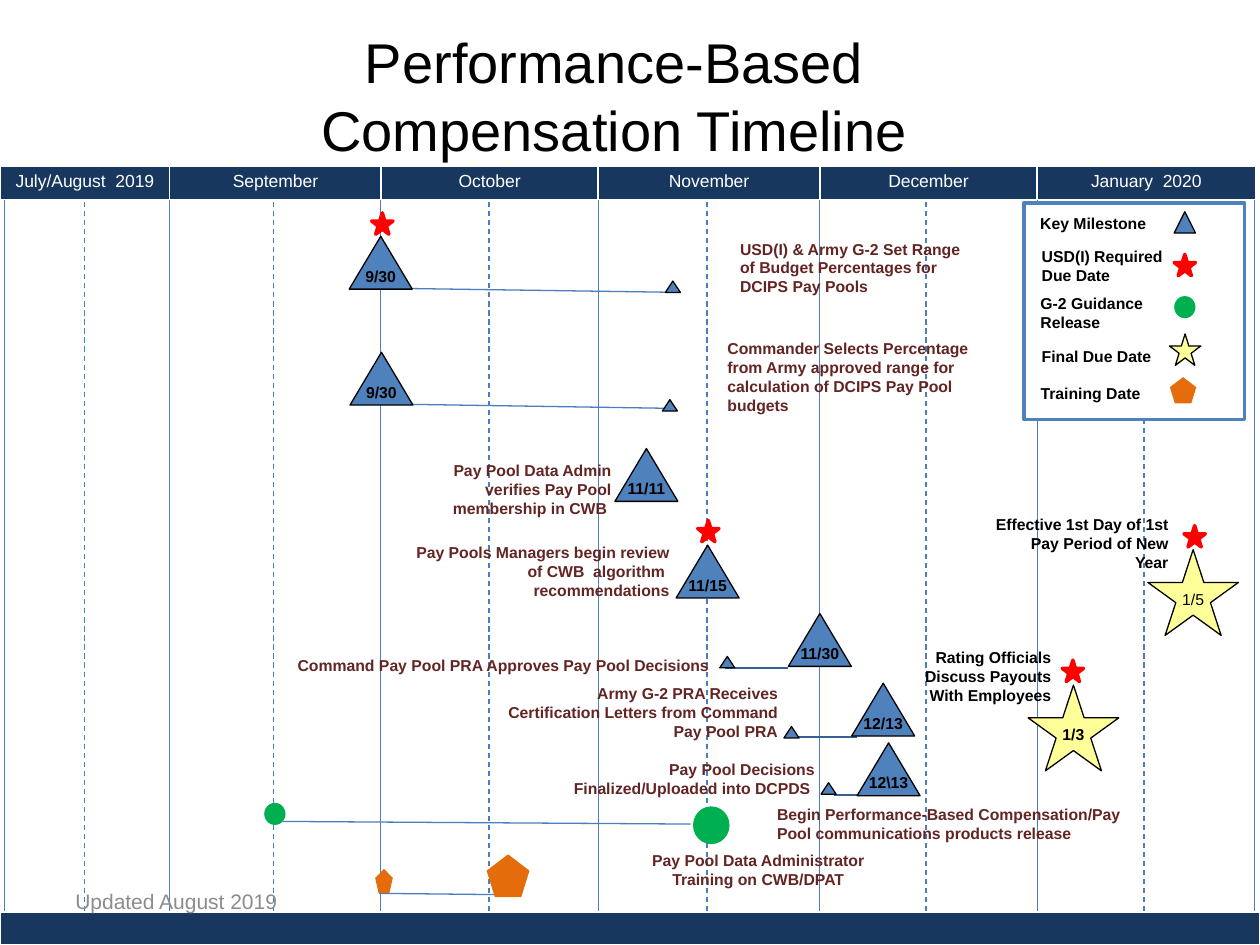
"""Builds the performance-based compensation timeline slide."""
import lxml.etree
import pptx
import pptx.dml.color
import pptx.enum.dml
import pptx.enum.shapes
import pptx.enum.text
import pptx.oxml.ns
import pptx.util

Pt = pptx.util.Pt
RGB = pptx.dml.color.RGBColor.from_string
SHAPE = pptx.enum.shapes.MSO_SHAPE
ALIGN = pptx.enum.text.PP_ALIGN
MIDDLE = pptx.enum.text.MSO_ANCHOR.MIDDLE
AUTO_SIZE = pptx.enum.text.MSO_AUTO_SIZE
DASH = pptx.enum.dml.MSO_LINE.DASH

COLORS = {
    "black": "000000", "white": "FFFFFF", "navy": "17375E", "blue": "4F81BD",
    "grid": "4B7EBC", "bar": "376092", "maroon": "632523", "red": "FF0000",
    "yellow": "FFFF99", "green": "00B050", "orange": "E46C0A", "gray": "8C8C8C",
}


def write(frame, text, size, color, bold=False, alignment=ALIGN.LEFT):
    paragraph = frame.paragraphs[0]
    paragraph.alignment = alignment
    run = paragraph.add_run()
    run.text = text
    run.font.name = "Arial"
    run.font.size = Pt(size)
    run.font.bold = bold
    run.font.color.rgb = RGB(COLORS[color])


def add_line(x1, y1, x2, y2, color="grid", width=0.75, dash=None):
    line = slide.shapes.add_connector(
        pptx.enum.shapes.MSO_CONNECTOR.STRAIGHT, Pt(x1), Pt(y1), Pt(x2), Pt(y2))
    line.line.color.rgb = RGB(COLORS[color])
    line.line.width = Pt(width)
    line.line.dash_style = dash
    properties = line._element.spPr
    lxml.etree.SubElement(properties, pptx.oxml.ns.qn("a:effectLst"))


presentation = pptx.Presentation()
presentation.slide_width = Pt(720)
presentation.slide_height = Pt(540)
slide = presentation.slides.add_slide(presentation.slide_layouts[5])

title = slide.shapes.title
title.left, title.top, title.width, title.height = Pt(126), Pt(18), Pt(450), Pt(72.7)
title.text_frame.auto_size = AUTO_SIZE.NONE
title.text_frame.vertical_anchor = MIDDLE
write(title.text_frame, "Performance-Based Compensation Timeline", 32, "black",
      alignment=ALIGN.CENTER)

for x in (48.2, 156.2, 279.4, 404.1, 529.2, 653.8):
    add_line(x, 100, x, 540, dash=DASH)
for x in (2.6, 96.7, 217.4, 342, 468.5, 593, 717):
    add_line(x, 100, x, 540)

add_line(489.6, 421.2, 455.8, 421.2, "bar", 1)
add_line(489.6, 454.3, 476.6, 454.3, "bar", 1)
add_line(450, 381.6, 414, 381.6, "bar", 1)
add_line(235.4, 164.9, 382.3, 167)
add_line(236.2, 231.1, 380.2, 233.3)
add_line(161.3, 469.4, 394.6, 470.9)
add_line(216.7, 510.5, 283, 511.2)

marker_styles = {
    "legend panel": (SHAPE.RECTANGLE, 126, 123.8, "white", "blue", 2),
    "milestone": (SHAPE.ISOSCELES_TRIANGLE, 36, 30.2, "blue", "black", 0.75),
    "start": (SHAPE.ISOSCELES_TRIANGLE, 8.6, 6.5, "blue", "black", 0.75),
    "milestone key": (SHAPE.ISOSCELES_TRIANGLE, 12.2, 12.2, "blue", "black", 0.75),
    "required": (SHAPE.STAR_5_POINT, 12.2, 12.2, "red", "red", 2),
    "final": (SHAPE.STAR_5_POINT, 51.8, 49, "yellow", "black", 0.75),
    "final key": (SHAPE.STAR_5_POINT, 18, 18, "yellow", "black", 0.75),
    "release": (SHAPE.OVAL, 20.9, 21.6, "green", None, 0),
    "release key": (SHAPE.OVAL, 12.2, 12.6, "green", None, 0),
    "training": (SHAPE.REGULAR_PENTAGON, 24.5, 24.5, "orange", None, 0),
    "training start": (SHAPE.REGULAR_PENTAGON, 10.1, 13.7, "orange", None, 0),
    "training key": (SHAPE.REGULAR_PENTAGON, 15.1, 15.1, "orange", None, 0),
}
markers = [
    ("legend panel", 585.2, 115.9, ""),
    ("milestone", 199.6, 135, "9/30"),
    ("milestone", 200, 201.3, "9/30"),
    ("milestone", 351.4, 256.3, "11/11"),
    ("milestone", 386.4, 311.5, "11/15"),
    ("milestone", 450.5, 350.6, "11/30"),
    ("milestone", 486.7, 390.4, "12/13"),
    ("milestone", 489.8, 424.5, "12\\13"),
    ("start", 380.2, 160.6, ""),
    ("start", 378.5, 228.4, ""),
    ("start", 411.3, 375.1, ""),
    ("start", 448, 415.2, ""),
    ("start", 469.2, 447.3, ""),
    ("final", 587.5, 391.5, "1/3"),
    ("final", 655.9, 314.1, "1/5"),
    ("required", 212.4, 121.7, ""),
    ("required", 398.7, 297.4, ""),
    ("required", 676.6, 300.4, ""),
    ("required", 607, 377.3, ""),
    ("release", 396, 460.8, ""),
    ("release key", 151, 458.8, ""),
    ("training", 278.1, 488.2, ""),
    ("training start", 214.4, 496.5, ""),
    ("milestone key", 671, 121, ""),
    ("required", 671, 145.4, ""),
    ("release key", 671, 169.2, ""),
    ("final key", 668.2, 190.8, ""),
    ("training key", 668.5, 215.5, ""),
]
for style, left, top, text in markers:
    kind, width, height, fill, outline, outline_width = marker_styles[style]
    shape = slide.shapes.add_shape(kind, Pt(left), Pt(top), Pt(width), Pt(height))
    shape.shadow.inherit = False
    shape.fill.solid()
    shape.fill.fore_color.rgb = RGB(COLORS[fill])
    if outline:
        shape.line.color.rgb = RGB(COLORS[outline])
        shape.line.width = Pt(outline_width)
    else:
        shape.line.fill.background()
    if text:
        shape.text_frame.word_wrap = False
        shape.text_frame.vertical_anchor = MIDDLE
        write(shape.text_frame, text, 9, "black", text != "1/5", ALIGN.CENTER)

labels = [
    (415.8, 133.2, 144.7, 40.3, "maroon", ALIGN.LEFT,
     "USD(I) & Army G-2 Set Range of Budget Percentages for DCIPS Pay Pools"),
    (408.6, 190.1, 154.1, 51.1, "maroon", ALIGN.LEFT,
     "Commander Selects Percentage from Army approved range for calculation of DCIPS Pay Pool budgets"),
    (224.6, 259.9, 131.8, 40.3, "maroon", ALIGN.RIGHT,
     "Pay Pool Data Admin verifies Pay Pool membership in CWB "),
    (230.4, 306.7, 159.1, 40.3, "maroon", ALIGN.RIGHT,
     "Pay Pools Managers begin review of CWB  algorithm  recommendations"),
    (132, 371, 280, 18, "maroon", ALIGN.RIGHT,
     "Command Pay Pool PRA Approves Pay Pool Decisions"),
    (280.1, 387.4, 171.4, 40.3, "maroon", ALIGN.RIGHT,
     "Army G-2 PRA Receives Certification Letters from Command Pay Pool PRA"),
    (310.5, 430.6, 162, 28.8, "maroon", ALIGN.RIGHT,
     "Pay Pool Decisions Finalized/Uploaded into DCPDS "),
    (437, 456.5, 216, 28.8, "maroon", ALIGN.LEFT,
     "Begin Performance-Based Compensation/Pay Pool communications products release"),
    (348.3, 482.4, 169.9, 28.8, "maroon", ALIGN.CENTER,
     "Pay Pool Data Administrator Training on CWB/DPAT"),
    (560.9, 290.9, 113.8, 40.3, "black", ALIGN.RIGHT,
     "Effective 1st Day of 1st Pay Period of New Year"),
    (514.8, 366.5, 92.9, 40.3, "black", ALIGN.RIGHT,
     "Rating Officials Discuss Payouts With Employees"),
    (587.3, 118.8, 113.8, 18, "black", ALIGN.LEFT, "Key Milestone"),
    (588.2, 137.5, 87.8, 28.8, "black", ALIGN.LEFT, "USD(I) Required Due Date"),
    (587.5, 164.2, 74.9, 28.8, "black", ALIGN.LEFT, "G-2 Guidance Release"),
    (588.2, 194.4, 80.6, 18, "black", ALIGN.LEFT, "Final Due Date"),
    (587.5, 215.5, 73.4, 18, "black", ALIGN.LEFT, "Training Date"),
]
for left, top, width, height, color, alignment, text in labels:
    frame = slide.shapes.add_textbox(Pt(left), Pt(top), Pt(width), Pt(height)).text_frame
    frame.word_wrap = True
    frame.auto_size = AUTO_SIZE.SHAPE_TO_FIT_TEXT
    write(frame, text, 9, color, True, alignment)

footer_bar = slide.shapes.add_table(1, 1, 0, Pt(521.2), Pt(720), Pt(18.8)).table
footer_bar.first_row = False
footer_cell = footer_bar.cell(0, 0)
footer_cell.fill.solid()
footer_cell.fill.fore_color.rgb = RGB(COLORS["navy"])
paragraph_end = lxml.etree.SubElement(
    footer_cell.text_frame.paragraphs[0]._p, pptx.oxml.ns.qn("a:endParaRPr"))
paragraph_end.set("sz", "800")

months = [("July/August  2019", 97), ("September", 120.8), ("October", 124),
          ("November", 126.8), ("December", 124), ("January  2020", 125)]
month_table = slide.shapes.add_table(1, len(months), 0, Pt(95), Pt(717.6), Pt(19)).table
for index, (month, width) in enumerate(months):
    month_table.columns[index].width = Pt(width)
    cell = month_table.cell(0, index)
    cell.margin_top = Pt(3)
    cell.fill.solid()
    cell.fill.fore_color.rgb = RGB(COLORS["navy"])
    write(cell.text_frame, month, 10, "white", alignment=ALIGN.CENTER)

update_note = slide.shapes.add_textbox(Pt(36), Pt(500.4), Pt(167.8), Pt(28.8)).text_frame
update_note.word_wrap = True
update_note.vertical_anchor = MIDDLE
write(update_note, "Updated August 2019", 12, "gray")

presentation.save("out.pptx")
